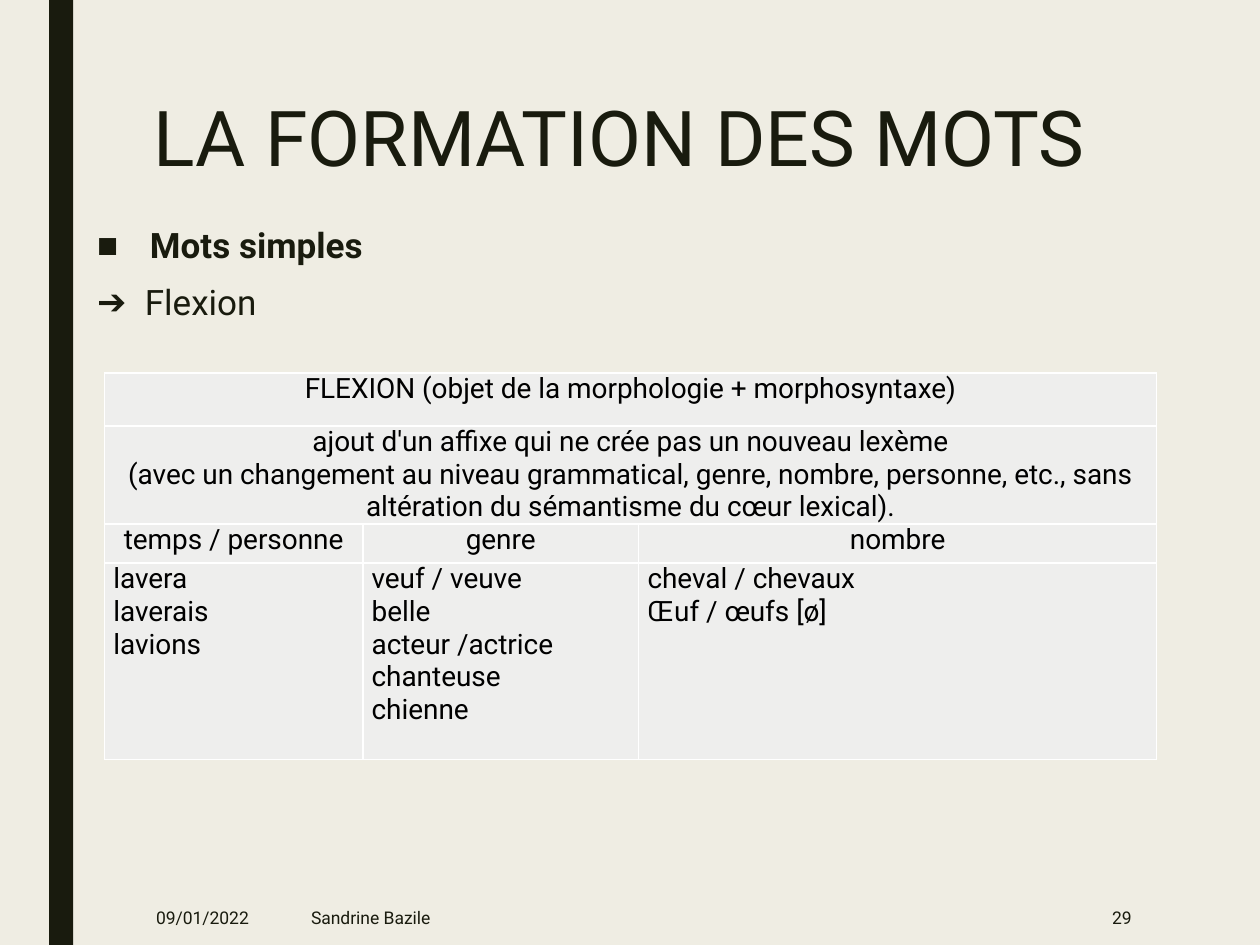
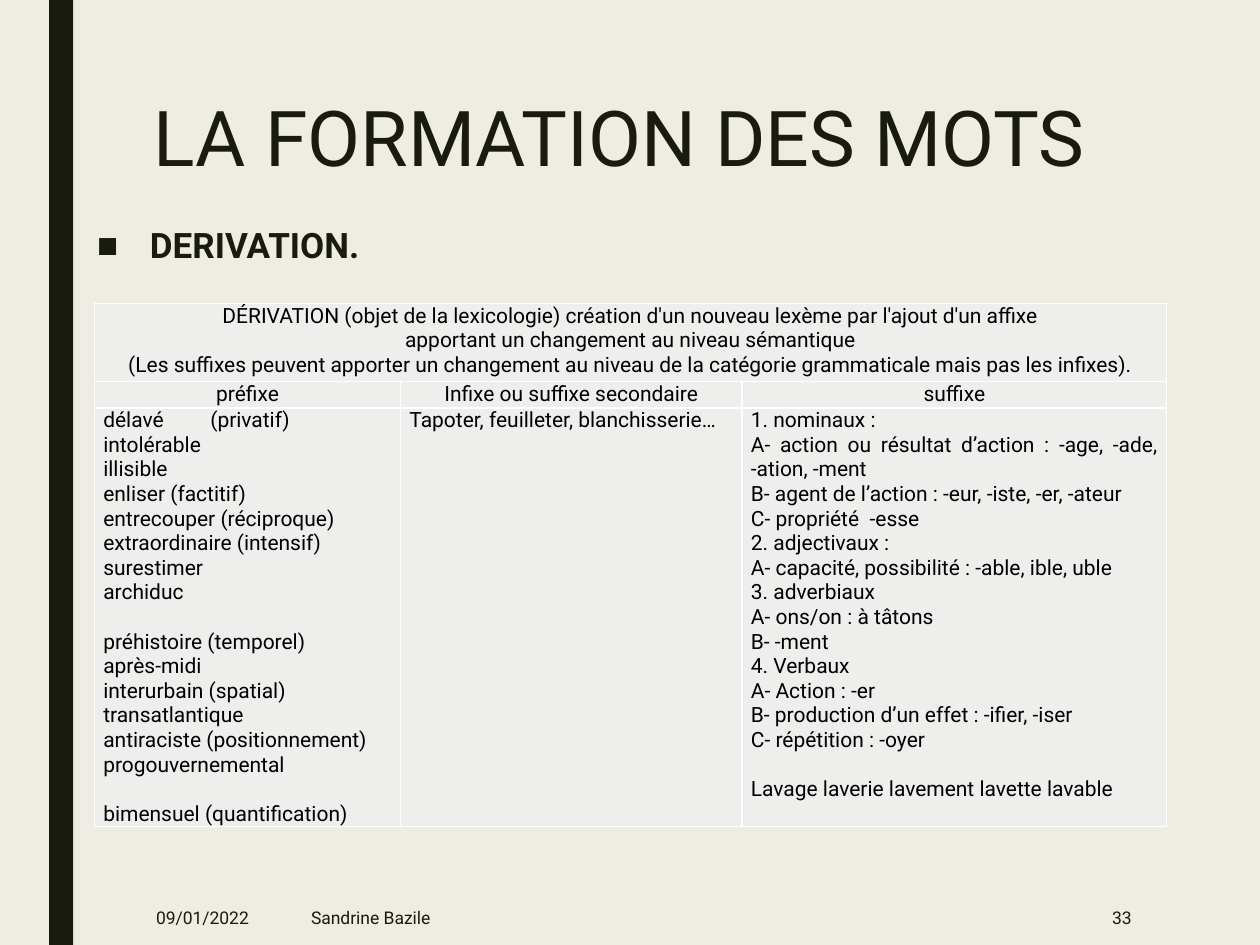
from dataclasses import dataclass
from typing import Optional

from lxml import etree
from pptx import Presentation
from pptx.dml.color import RGBColor
from pptx.enum.shapes import MSO_SHAPE
from pptx.enum.text import MSO_ANCHOR, MSO_AUTO_SIZE, PP_ALIGN
from pptx.oxml.ns import qn
from pptx.util import Inches, Pt

RECT = MSO_SHAPE.RECTANGLE
TOP, MIDDLE = MSO_ANCHOR.TOP, MSO_ANCHOR.MIDDLE
LEFT, RIGHT = PP_ALIGN.LEFT, PP_ALIGN.RIGHT
CENTER, JUSTIFY = PP_ALIGN.CENTER, PP_ALIGN.JUSTIFY
NO_FIT = MSO_AUTO_SIZE.NONE

CREAM = RGBColor(0xEF, 0xED, 0xE3)
DARK = RGBColor(0x19, 0x1B, 0x0E)
PALE = RGBColor(0xEE, 0xEE, 0xED)
BLACK = RGBColor(0, 0, 0)
WHITE = RGBColor(0xFF, 0xFF, 0xFF)

FONT = "Roboto"
TITLE = "LA FORMATION DES MOTS"
DATE = "09/01/2022"
AUTHOR = "Sandrine Bazile"
LINE_GAP = 14


@dataclass
class Para:
    text: str
    align: PP_ALIGN = LEFT
    bold: bool = False
    before: float = 0
    after: float = 0
    bullet: str = ""
    indent: float = 0
    tab: float = 0


@dataclass
class Grid:
    left: float
    top: float
    cols: list[float]
    rows: list[float]
    size: float
    cells: list[list[list[Para]]]


@dataclass
class Page:
    number: str
    points: list[Para]
    grid: Grid


def paras(text: str, align: PP_ALIGN = LEFT) -> list[Para]:
    """Make one paragraph of each line."""
    return [Para(line, align) for line in text.strip().split("\n")]


def head(text: str) -> list[Para]:
    return [Para(text, CENTER)]


def write(frame, items: list[Para], size: float = 12, color: RGBColor = DARK,
          spacing: Optional[float] = None, anchor: Optional[MSO_ANCHOR] = None) -> None:
    frame.word_wrap = True
    if anchor is not None:
        frame.vertical_anchor = anchor
    for i, item in enumerate(items):
        para = frame.add_paragraph() if i else frame.paragraphs[0]
        para.text = item.text
        para.alignment = item.align
        para.line_spacing = spacing
        para.space_before, para.space_after = Pt(item.before), Pt(item.after)
        for run in para.runs:
            font = run.font
            font.name, font.size, font.bold = FONT, Pt(size), item.bold
            font.color.rgb = color
        props = para._p.get_or_add_pPr()
        if item.bullet:
            props.set("marL", str(Inches(item.indent)))
            props.set("indent", str(-Inches(item.indent)))
            etree.SubElement(props, qn("a:buChar"), char=item.bullet)
        if item.tab:
            tabs = etree.SubElement(props, qn("a:tabLst"))
            etree.SubElement(tabs, qn("a:tab"), pos=str(Inches(item.tab)), algn="l")


def place(shape, left: float, top: float, width: float, height: float) -> None:
    shape.left, shape.top = Inches(left), Inches(top)
    shape.width, shape.height = Inches(width), Inches(height)


def border(cell) -> None:
    props = cell._tc.get_or_add_tcPr()
    for side in ("lnL", "lnR", "lnT", "lnB"):
        line = etree.SubElement(props, qn(f"a:{side}"), w=str(Pt(1)))
        fill = etree.SubElement(line, qn("a:solidFill"))
        etree.SubElement(fill, qn("a:srgbClr"), val=str(WHITE))


def draw_grid(slide, grid: Grid) -> None:
    """Draw the table; a row with a single cell spans every column."""
    table = slide.shapes.add_table(
        len(grid.rows), len(grid.cols), Inches(grid.left), Inches(grid.top),
        Inches(sum(grid.cols)), Inches(sum(grid.rows))).table
    table.first_row = table.horz_banding = False
    for col, width in zip(table.columns, grid.cols):
        col.width = Inches(width)
    for row, height in zip(table.rows, grid.rows):
        row.height = Inches(height)
        for cell in row.cells:
            border(cell)
            cell.fill.solid()
            cell.fill.fore_color.rgb = PALE
            cell.margin_left = cell.margin_right = Inches(0.07)
            cell.margin_top = cell.margin_bottom = 0
    for r, texts in enumerate(grid.cells):
        if len(texts) == 1:
            table.cell(r, 0).merge(table.cell(r, len(grid.cols) - 1))
        for c, items in enumerate(texts):
            write(table.cell(r, c).text_frame, items, size=grid.size, color=BLACK)


def draw_band(slide) -> None:
    band = slide.shapes.add_shape(RECT, Inches(0.39), 0, Inches(0.19), Inches(7.5))
    band.shadow.inherit = False
    band.fill.solid()
    band.fill.fore_color.rgb = DARK
    band.line.fill.background()


def draw_foot(slide, number: str) -> None:
    for left, width, text, align in ((1.14, 0.99, DATE, LEFT),
                                     (2.37, 5.15, AUTHOR, LEFT),
                                     (7.77, 1.31, number, RIGHT)):
        box = slide.shapes.add_textbox(Inches(left), Inches(7.06),
                                       Inches(width), Inches(0.44))
        write(box.text_frame, [Para(text, align)], size=10, anchor=MIDDLE)


def draw_page(deck, page: Page) -> None:
    slide = deck.slides.add_slide(deck.slide_layouts[1])
    draw_band(slide)
    title, body = slide.shapes.title, slide.placeholders[1]
    place(title, 1.12, 0.75, 7.88, 1.62)
    place(body, 0.67, 1.75, 8.92, 5.54)
    for holder in (title, body):
        holder.text_frame.auto_size = NO_FIT
    write(title.text_frame, [Para(TITLE)], size=44, spacing=0.89, anchor=TOP)
    write(body.text_frame, page.points, size=20, spacing=0.94, anchor=TOP)
    draw_grid(slide, page.grid)
    draw_foot(slide, page.number)


FLEXION = Grid(0.83, 2.96, [2.05, 2.19, 4.11], [0.42, 0.78, 0.31, 1.56], 16, [
    [head("FLEXION (objet de la morphologie + morphosyntaxe)")],
    [head("ajout d'un affixe qui ne crée pas un nouveau lexème\n"
          "(avec un changement au niveau grammatical, genre, nombre, personne, "
          "etc., sans altération du sémantisme du cœur lexical).")],
    [head("temps / personne"), head("genre"), head("nombre")],
    [paras("lavera\nlaverais\nlavions"),
     paras("veuf / veuve\nbelle\nacteur /actrice\nchanteuse\nchienne"),
     paras("cheval / chevaux\nŒuf / œufs [ø]")],
])

PREFIXES = [
    Para("délavé\t(privatif)", tab=0.85),
    *paras("""
intolérable
illisible
enliser (factitif)
entrecouper (réciproque)
extraordinaire (intensif)
surestimer
archiduc
"""),
    Para("préhistoire (temporel)", before=LINE_GAP),
    *paras("""
après-midi
interurbain (spatial)
transatlantique
antiraciste (positionnement)
progouvernemental
"""),
    Para("bimensuel (quantification)", before=LINE_GAP),
]

SUFFIXES = [
    *paras("""
1. nominaux :
A- action ou résultat d’action : -age, -ade, -ation, -ment
B- agent de l’action : -eur, -iste, -er, -ateur
C- propriété  -esse
2. adjectivaux :
A- capacité, possibilité : -able, ible, uble
3. adverbiaux
A- ons/on : à tâtons
B- -ment
4. Verbaux
A- Action : -er
B- production d’un effet : -ifier, -iser
C- répétition : -oyer
""", JUSTIFY),
    Para("Lavage laverie lavement lavette lavable", before=LINE_GAP),
]

DERIVATION = Grid(0.75, 2.41, [2.43, 2.71, 3.37], [0.62, 0.21, 3.32], 12, [
    [head("DÉRIVATION (objet de la lexicologie) création d'un nouveau lexème "
          "par l'ajout d'un affixe\n"
          "apportant un changement au niveau sémantique\n"
          "(Les suffixes peuvent apporter un changement au niveau de la "
          "catégorie grammaticale mais pas les infixes).")],
    [head("préfixe"), head("Infixe ou suffixe secondaire"), head("suffixe")],
    [PREFIXES, paras("Tapoter, feuilleter, blanchisserie…"), SUFFIXES],
])

PAGES = [
    Page("29", [
        Para("Mots simples", JUSTIFY, bold=True, before=10, bullet="■", indent=0.42),
        Para("Flexion", JUSTIFY, before=10, after=2, bullet="➔", indent=0.38),
    ], FLEXION),
    Page("33", [
        Para("DERIVATION.", bold=True, before=10, after=2, bullet="■", indent=0.42),
    ], DERIVATION),
]


def main() -> None:
    deck = Presentation()
    deck.slide_width, deck.slide_height = Inches(10), Inches(7.5)
    back = deck.slide_master.background.fill
    back.solid()
    back.fore_color.rgb = CREAM
    for page in PAGES:
        draw_page(deck, page)
    deck.save("out.pptx")


if __name__ == "__main__":
    main()
